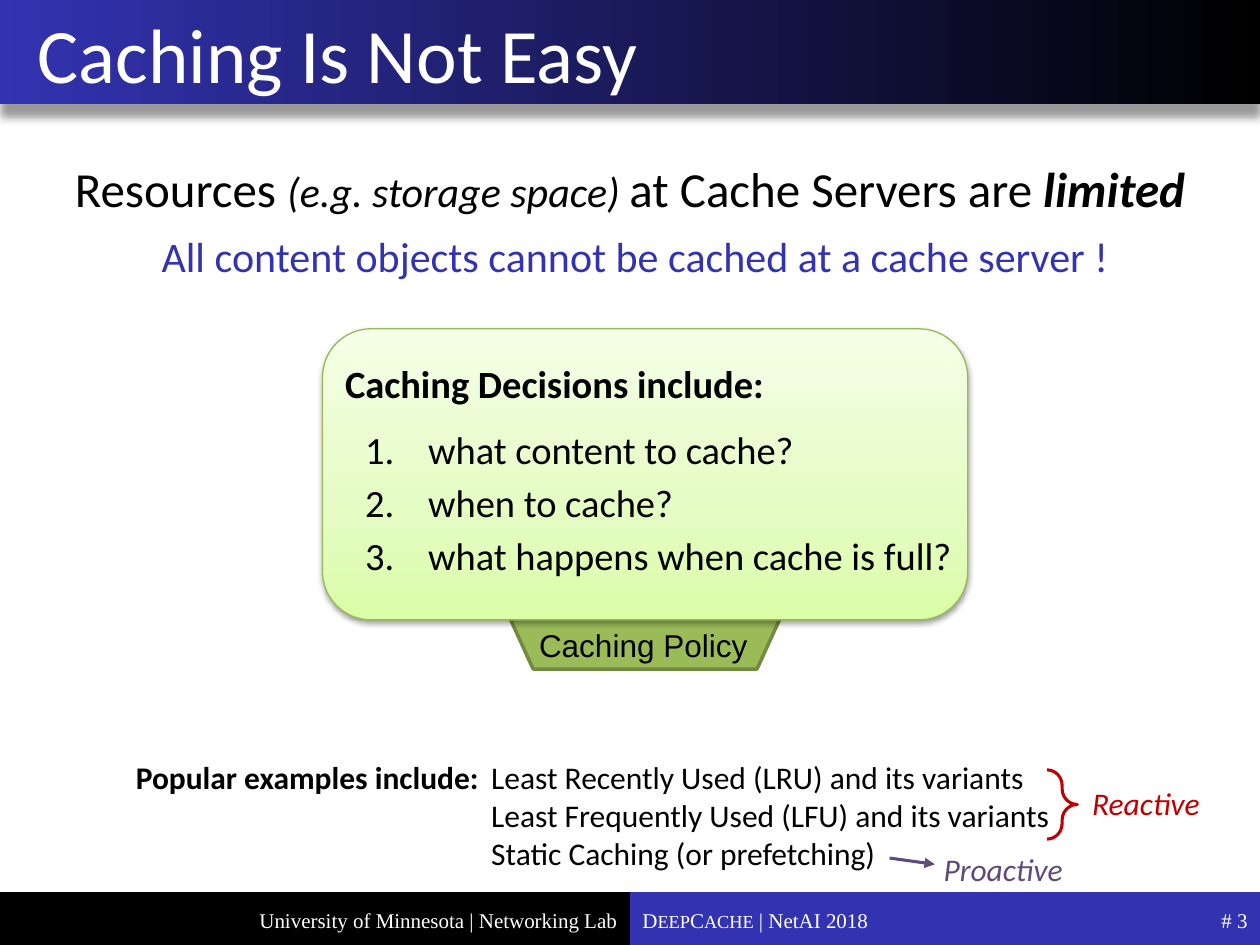
"""Build the slide on why caching is not easy."""
from dataclasses import dataclass

from lxml.etree import SubElement
from pptx import Presentation
from pptx.dml.color import RGBColor
from pptx.enum.shapes import MSO_CONNECTOR, MSO_SHAPE
from pptx.enum.text import MSO_ANCHOR, MSO_AUTO_SIZE, PP_ALIGN
from pptx.oxml.ns import qn
from pptx.util import Inches, Pt

COLUMNS, ROWS = 100, 75
WIDTH, HEIGHT = Inches(10), Inches(7.5)


@dataclass(frozen=True)
class Theme:
    body: str = "Calibri"
    label: str = "Arial"
    footer: str = "Times New Roman"
    black: str = "000000"
    white: str = "FFFFFF"
    blue: str = "3333B2"
    green: str = "9BBB59"
    green_edge: str = "738A42"
    card_edge: str = "98B955"
    red: str = "C00000"
    purple: str = "604A7B"
    card_stops: tuple = ((0, "DAFDA7"), (35, "E4FCC2"), (100, "F5FFE7"))
    title_size: float = 44
    lead_size: float = 28
    aside_size: float = 24
    card_size: float = 22
    note_size: float = 18
    footer_size: float = 12
    small_caps_size: float = 10.5


THEME = Theme()
SMALL_CAPS = {"size": THEME.small_caps_size}

TITLE = ["Caching Is Not Easy"]
LEAD = [[
    ("Resources ", {}),
    ("(e.g. storage space) ", {"size": THEME.aside_size, "italic": True}),
    ("at Cache Servers are ", {}),
    ("limited", {"bold": True, "italic": True}),
]]
CONSEQUENCE = ["All content objects cannot be cached at a cache server !"]
DECISIONS_HEADING = ["Caching Decisions include:"]
DECISIONS = ["what content to cache?", "when to cache?", "what happens when cache is full?"]
POLICY = ["Caching Policy"]
EXAMPLES_HEADING = ["Popular examples include:"]
EXAMPLES = [
    "Least Recently Used (LRU) and its variants",
    "Least Frequently Used (LFU) and its variants",
    "Static Caching (or prefetching)",
]
LAB = ["University of Minnesota | Networking Lab"]
VENUE = [[("D", {}), ("EEP", SMALL_CAPS), ("C", {}), ("ACHE", SMALL_CAPS), (" | NetAI 2018", {})]]
PAGE = ["# 3"]


def grid(column, row, columns, rows):
    return (int(WIDTH * column / COLUMNS), int(HEIGHT * row / ROWS),
            int(WIDTH * columns / COLUMNS), int(HEIGHT * rows / ROWS))


def style(font, name=None, size=None, color=None, bold=None, italic=None):
    if name:
        font.name = name
    if size:
        font.size = Pt(size)
    if color:
        font.color.rgb = RGBColor.from_string(color)
    if bold:
        font.bold = True
    if italic:
        font.italic = True


def add_text(slide, place, paragraphs, size, color=THEME.black, name=THEME.body, bold=False,
             italic=False, align=PP_ALIGN.LEFT, middle=False, wrap=True, indent=0,
             numbered=False, gap=0):
    frame = slide.shapes.add_textbox(*grid(*place)).text_frame
    frame.word_wrap = wrap
    if not wrap:
        frame.auto_size = MSO_AUTO_SIZE.SHAPE_TO_FIT_TEXT
    frame.vertical_anchor = MSO_ANCHOR.MIDDLE if middle else MSO_ANCHOR.TOP
    for index, content in enumerate(paragraphs):
        paragraph = frame.add_paragraph() if index else frame.paragraphs[0]
        paragraph.alignment = align
        if index and gap:
            paragraph.space_before = Pt(gap)
        properties = paragraph._p.get_or_add_pPr()
        if indent:
            properties.set("marL", str(Inches(indent)))
        if numbered:
            properties.set("indent", str(-Inches(indent)))
            SubElement(properties, qn("a:buFont"), typeface="+mj-lt")
            SubElement(properties, qn("a:buAutoNum"), type="arabicPeriod")
        style(paragraph.font, name, size, color, bold, italic)
        for words, changes in [(content, {})] if isinstance(content, str) else content:
            run = paragraph.add_run()
            run.text = words
            style(run.font, **changes)


def add_block(slide, kind, place, fill=None, edge=None, edge_width=0):
    block = slide.shapes.add_shape(kind, *grid(*place))
    block.shadow.inherit = False
    if fill:
        block.fill.solid()
        block.fill.fore_color.rgb = RGBColor.from_string(fill)
    else:
        block.fill.background()
    if edge:
        block.line.color.rgb = RGBColor.from_string(edge)
        block.line.width = Pt(edge_width)
    else:
        block.line.fill.background()
    return block


def add_gradient(block, stops, angle):
    block.fill.gradient()
    block.fill.gradient_angle = angle
    stop_list = block._element.spPr.find(qn("a:gradFill")).find(qn("a:gsLst"))
    for stop in list(stop_list):
        stop_list.remove(stop)
    for share, color in stops:
        stop = SubElement(stop_list, qn("a:gs"), pos=str(share * 1000))
        SubElement(stop, qn("a:srgbClr"), val=color)


def add_shadow(block, opacity, blur, distance):
    effects = block._element.spPr.find(qn("a:effectLst"))
    shadow = SubElement(effects, qn("a:outerShdw"), blurRad=str(Pt(blur)), dist=str(Pt(distance)),
                        dir="5400000", rotWithShape="0")
    color = SubElement(shadow, qn("a:srgbClr"), val=THEME.black)
    SubElement(color, qn("a:alpha"), val=str(opacity * 1000))


def add_arrow(slide, start, end, color, width):
    x, y, end_x, end_y = grid(*start, *end)
    arrow = slide.shapes.add_connector(MSO_CONNECTOR.STRAIGHT, x, y, end_x, end_y)
    arrow.line.color.rgb = RGBColor.from_string(color)
    arrow.line.width = Pt(width)
    SubElement(arrow.line._get_or_add_ln(), qn("a:tailEnd"), type="triangle")
    SubElement(arrow._element.spPr, qn("a:effectLst"))


def add_frame(slide):
    half = COLUMNS / 2
    for column, fill in ((half, THEME.blue), (0, THEME.black)):
        add_block(slide, MSO_SHAPE.RECTANGLE, (column, 70.8, half, 4.2), fill)
    banner = add_block(slide, MSO_SHAPE.RECTANGLE, (0, 0, COLUMNS, 8.3))
    add_gradient(banner, ((0, THEME.black), (100, THEME.blue)), 180)
    add_shadow(banner, 40, 5, 7)
    add_text(slide, (0, 0, 97.5, 8.3), TITLE, THEME.title_size, THEME.white, middle=True, indent=0.2)
    for column, columns, words, align in (
        (11.7, 38.3, LAB, PP_ALIGN.RIGHT),
        (half, 38.3, VENUE, PP_ALIGN.LEFT),
        (88.3, 11.7, PAGE, PP_ALIGN.RIGHT),
    ):
        add_text(slide, (column, 71, columns, 4), words, THEME.footer_size, THEME.white,
                 THEME.footer, align=align, middle=True)


def add_decisions(slide):
    tab = add_block(slide, MSO_SHAPE.TRAPEZOID, (40.4, 48.9, 21.6, 4.2), THEME.green, THEME.green_edge, 2)
    tab.adjustments[0] = 0.456
    tab._element.spPr.find(qn("a:xfrm")).set("flipV", "1")
    add_text(slide, (41.8, 49.2, 18.7, 4), POLICY, THEME.note_size, name=THEME.label, wrap=False)
    card = add_block(slide, MSO_SHAPE.ROUNDED_RECTANGLE, (25.6, 26.1, 51.2, 23.1),
                     edge=THEME.card_edge, edge_width=0.75)
    add_gradient(card, THEME.card_stops, 90)
    add_shadow(card, 38, 3.1, 1.6)
    add_text(slide, (26.4, 28.1, 35.6, 4.7), DECISIONS_HEADING, THEME.card_size, bold=True, wrap=False)
    add_text(slide, (28, 33.3, 51.2, 15.6), DECISIONS, THEME.card_size, indent=0.5, numbered=True, gap=4)


def add_examples(slide):
    size = THEME.note_size
    add_text(slide, (9.8, 59.7, 29.4, 4), EXAMPLES_HEADING, size, bold=True, wrap=False)
    add_text(slide, (38, 59.7, 46.8, 10.1), EXAMPLES, size, wrap=False)
    brace = add_block(slide, MSO_SHAPE.RIGHT_BRACE, (83.1, 61.1, 2.4, 5.5), edge=THEME.red, edge_width=1.75)
    brace.adjustments[0] = 0.514
    add_text(slide, (85.7, 61.7, 10.7, 4), ["Reactive"], size, THEME.red, italic=True, wrap=False)
    add_text(slide, (73.9, 67, 11.6, 4), ["Proactive"], size, THEME.purple, italic=True, wrap=False)
    add_arrow(slide, (70.6, 68.1), (74.2, 68.6), THEME.purple, 1.75)


def main():
    deck = Presentation()
    deck.slide_width, deck.slide_height = WIDTH, HEIGHT
    slide = deck.slides.add_slide(deck.slide_layouts[6])
    add_frame(slide)
    add_text(slide, (0, 12.1, COLUMNS, 5.7), LEAD, THEME.lead_size, align=PP_ALIGN.CENTER)
    add_text(slide, (0.4, 17.8, COLUMNS, 5), CONSEQUENCE, THEME.aside_size, THEME.blue, align=PP_ALIGN.CENTER)
    add_decisions(slide)
    add_examples(slide)
    deck.save("out.pptx")


if __name__ == "__main__":
    main()
